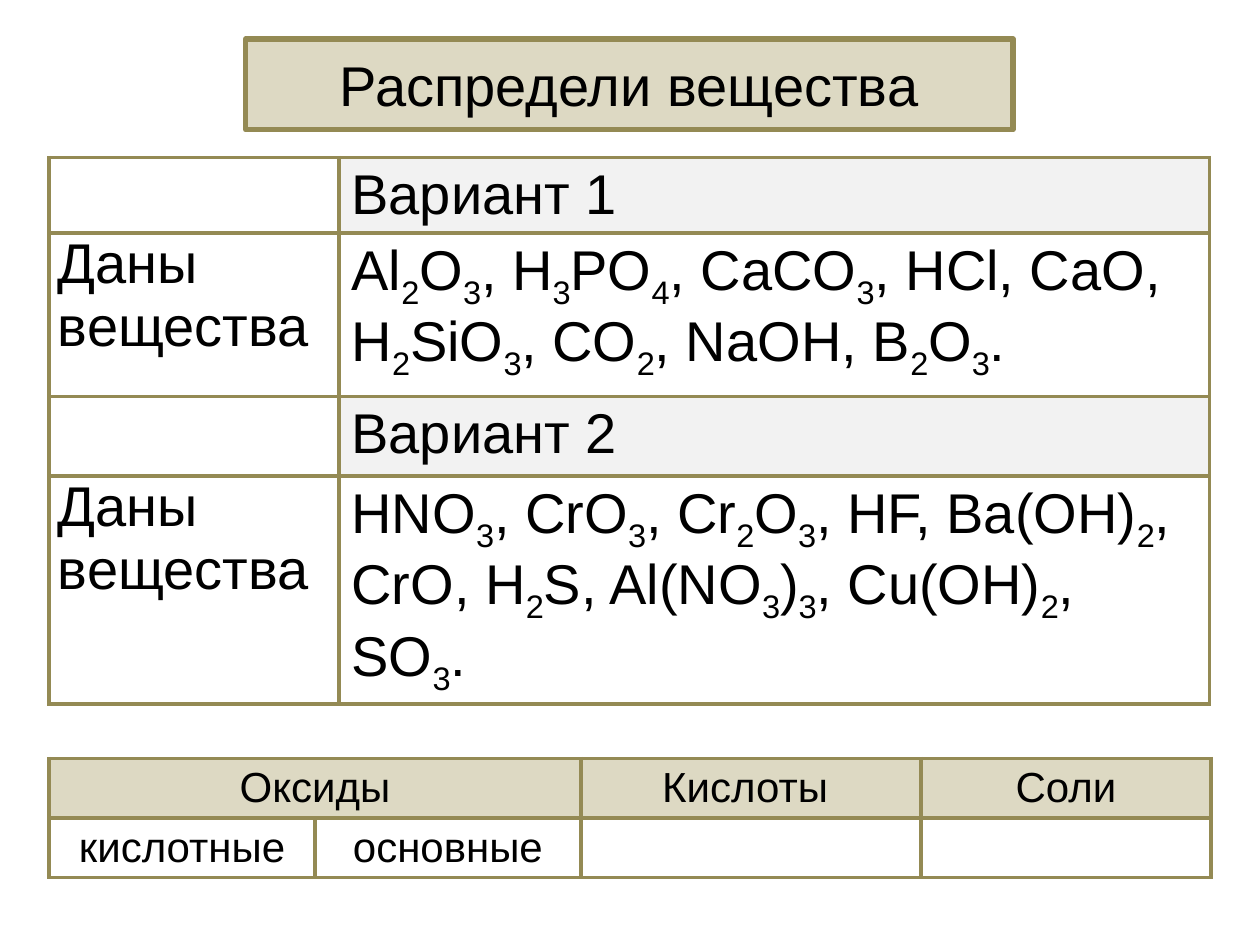
from itertools import groupby

from lxml.etree import SubElement
from pptx import Presentation
from pptx.dml.color import RGBColor
from pptx.enum.text import MSO_ANCHOR, PP_ALIGN
from pptx.oxml.ns import qn
from pptx.util import Inches, Pt

BLACK = RGBColor(0x00, 0x00, 0x00)
OLIVE = RGBColor(0x94, 0x8A, 0x54)
SAND = RGBColor(0xDD, 0xD9, 0xC3)
GREY = RGBColor(0xF2, 0xF2, 0xF2)

FORMULAS_1 = "Al2O3, H3PO4, CaCO3, HCl, CaO, H2SiO3, CO2, NaOH, B2O3."
FORMULAS_2 = "HNO3, CrO3, Cr2O3, HF, Ba(OH)2, CrO, H2S, Al(NO3)3, Cu(OH)2, SO3."


def write(tf, text, size=32, align=PP_ALIGN.LEFT, formula=False):
    """Write one paragraph; in a formula the digits become subscripts."""
    p = tf.paragraphs[0]
    p.alignment = align
    parts = [text]
    if formula:
        parts = ["".join(chars) for _, chars in groupby(text, str.isdigit)]
    for part in parts:
        r = p.add_run()
        r.text = part
        r.font.size = Pt(size)
        r.font.name = "Arial"
        r.font.color.rgb = BLACK
        if formula and part.isdigit():
            r.font._element.set("baseline", "-25000")


class SlideBuilder:
    line_color = OLIVE
    border_width = Pt(2.25)

    def __init__(self, slide):
        self.s = slide

    def title(self, text, left, top, width, height):
        sp = self.s.shapes.title
        sp.left, sp.top = Inches(left), Inches(top)
        sp.width, sp.height = Inches(width), Inches(height)
        sp.fill.solid()
        sp.fill.fore_color.rgb = SAND
        sp.line.color.rgb = self.line_color
        sp.line.width = Pt(3)
        sp.text_frame.vertical_anchor = MSO_ANCHOR.MIDDLE
        write(sp.text_frame, text, align=PP_ALIGN.CENTER)

    def table(self, left, top, cols, rows):
        frame = self.s.shapes.add_table(
            len(rows), len(cols), Inches(left), Inches(top),
            Inches(sum(cols)), Inches(sum(rows)))
        table = frame.table
        table.first_row = table.horz_banding = False
        for col, width in zip(table.columns, cols):
            col.width = Inches(width)
        for row, height in zip(table.rows, rows):
            row.height = Inches(height)
        for cell in table.iter_cells():
            self.borders(cell)
            cell.fill.background()
        return table

    def borders(self, cell):
        tcPr = cell._tc.get_or_add_tcPr()
        for side in ("a:lnL", "a:lnR", "a:lnT", "a:lnB"):
            ln = SubElement(tcPr, qn(side), w=str(self.border_width))
            fill = SubElement(ln, qn("a:solidFill"))
            SubElement(fill, qn("a:srgbClr"), val=str(self.line_color))

    def cell(self, cell, text, fill=None, tight=False, **fmt):
        if fill is not None:
            cell.fill.solid()
            cell.fill.fore_color.rgb = fill
        if tight:
            cell.margin_left = cell.margin_right = Inches(0.07)
            cell.margin_top = cell.margin_bottom = 0
        write(cell.text_frame, text, **fmt)


def main():
    prs = Presentation()
    prs.slide_width, prs.slide_height = Inches(10), Inches(7.5)
    b = SlideBuilder(prs.slides.add_slide(prs.slide_layouts[5]))

    b.title("Распредели вещества", 1.95, 0.31, 6.09, 0.72)

    # Answer table: substance classes
    answers = b.table(0.39, 6.02, [2.11, 2.11, 2.7, 2.3], [0.47, 0.47])
    answers.cell(0, 0).merge(answers.cell(0, 1))
    centred = {"size": 24, "align": PP_ALIGN.CENTER}
    for col, text in ((0, "Оксиды"), (2, "Кислоты "), (3, "Соли")):
        b.cell(answers.cell(0, col), text, fill=SAND, **centred)
    for col, text in enumerate(("кислотные", "основные")):
        b.cell(answers.cell(1, col), text, **centred)

    # Task table: a heading row and a formula row for each variant
    tasks = b.table(0.39, 1.25, [2.3, 6.91], [0.59, 1.3, 0.63, 1.8])
    for i, formulas in enumerate((FORMULAS_1, FORMULAS_2)):
        row = 2 * i
        b.cell(tasks.cell(row, 1), f"Вариант {i + 1}", fill=GREY)
        b.cell(tasks.cell(row + 1, 0), "Даны вещества", tight=True)
        b.cell(tasks.cell(row + 1, 1), formulas, formula=True)

    prs.save("out.pptx")


if __name__ == "__main__":
    main()
